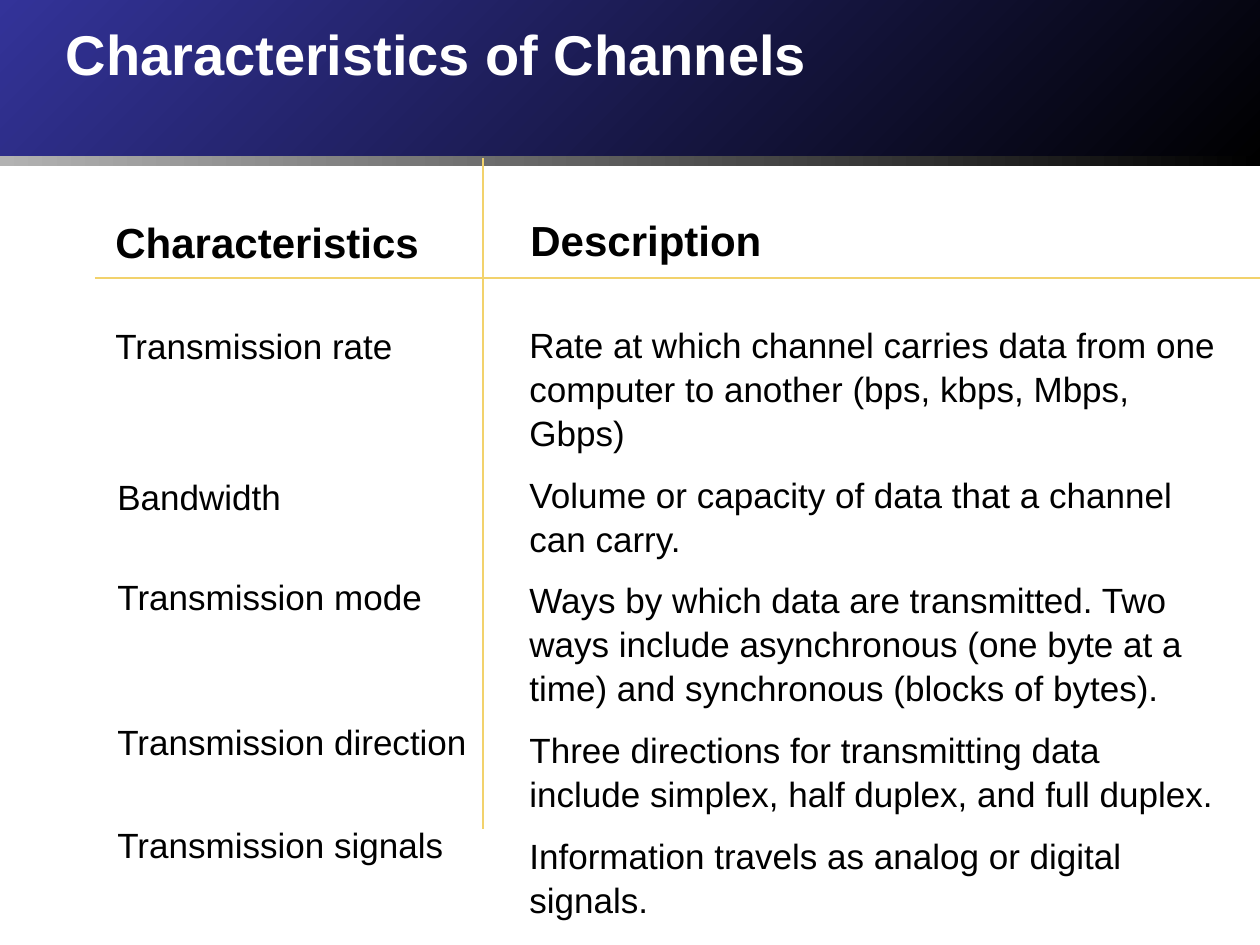
from dataclasses import dataclass

from lxml.etree import SubElement
from pptx import Presentation
from pptx.dml.color import RGBColor as Color
from pptx.enum.shapes import MSO_CONNECTOR as Connector, MSO_SHAPE as Shape
from pptx.enum.text import MSO_ANCHOR as Anchor, MSO_AUTO_SIZE as AutoSize, PP_ALIGN as Align
from pptx.oxml.ns import qn
from pptx.util import Emu, Pt

PX = 914400 // 126
WIDTH, HEIGHT = 1260, 945
TITLE_ONLY = 5


@dataclass(frozen=True)
class Theme:
    font: str = "Arial"
    blue: str = "333399"
    gray: str = "B2B2B2"
    black: str = "000000"
    white: str = "FFFFFF"
    gold: str = "F2D26C"
    title: int = 32
    heading: int = 24
    body: int = 20
    rule: float = 1.5


THEME = Theme()

# Term, left, top, width, height
TERMS = [
    ("Transmission rate", 103, 318, 305, 97),
    ("Bandwidth", 105, 469, 190, 55),
    ("Transmission mode", 105, 569, 333, 55),
    ("Transmission direction", 105, 714, 378, 55),
    ("Transmission signals", 105, 817, 354, 55),
]
DESCRIPTIONS = [
    "Rate at which channel carries data from one computer to another (bps, kbps, Mbps, Gbps)",
    "Volume or capacity of data that a channel can carry.",
    "Ways by which data are transmitted. Two ways include asynchronous "
    "(one byte at a time) and synchronous (blocks of bytes).",
    "Three directions for transmitting data include simplex, half duplex, and full duplex.",
    "Information travels as analog or digital signals.",
]


def px(*lengths):
    return [Emu(length * PX) for length in lengths]


def write(para, text, size=THEME.body, color=THEME.black, bold=False):
    para.alignment = Align.LEFT
    span = para.add_run()
    span.text = text
    span.font.name = THEME.font
    span.font.size = Pt(size)
    span.font.bold = bold
    span.font.color.rgb = Color.from_string(color)
    return span


def add_band(page, top, height, start, angle):
    """Add a full-width bar that fades from the start colour to black."""
    band = page.shapes.add_shape(Shape.RECTANGLE, *px(0, top, WIDTH, height))
    band.shadow.inherit = False
    band.line.fill.background()
    band.fill.gradient()
    band.fill.gradient_angle = angle
    for stop, color, position in zip(band.fill.gradient_stops, (start, THEME.black), (0, 1)):
        stop.color.rgb = Color.from_string(color)
        stop.position = position


def add_text_shadow(span):
    effects = SubElement(span.font._element, qn("a:effectLst"))
    shadow = SubElement(effects, qn("a:outerShdw"), dist="38100", dir="2700000", algn="tl")
    SubElement(shadow, qn("a:srgbClr"), val=THEME.black)
    # The schema wants effects between the fill and the typeface.
    span.font._element.find(qn("a:solidFill")).addnext(effects)


def place_title(page, text):
    title = page.shapes.title
    title.left, title.top, title.width, title.height = px(53, 13, 1144, 126)
    page.shapes._spTree.append(title._element)  # in front of the bands
    title.text_frame.vertical_anchor = Anchor.TOP
    span = write(title.text_frame.paragraphs[0], text, THEME.title, THEME.white, True)
    add_text_shadow(span)


def add_rule(page, *ends):
    rule = page.shapes.add_connector(Connector.STRAIGHT, *px(*ends))
    rule.line.color.rgb = Color.from_string(THEME.gold)
    rule.line.width = Pt(THEME.rule)
    SubElement(rule._element.spPr, qn("a:effectLst"))


def add_text(page, texts, left, top, width, height, wrap=False, before=0, spacing=1, **style):
    box = page.shapes.add_textbox(*px(left, top, width, height))
    frame = box.text_frame
    frame.word_wrap = wrap
    frame.auto_size = AutoSize.SHAPE_TO_FIT_TEXT
    for index, text in enumerate(texts):
        para = frame.add_paragraph() if index else frame.paragraphs[0]
        para.space_before = Pt(before)
        para.line_spacing = spacing
        write(para, text, **style)


def main():
    deck = Presentation()
    deck.slide_width, deck.slide_height = px(WIDTH, HEIGHT)
    page = deck.slides.add_slide(deck.slide_layouts[TITLE_ONLY])

    add_band(page, 0, 166, THEME.blue, 315)
    add_band(page, 156, 10, THEME.gray, 0)
    place_title(page, "Characteristics of Channels")

    add_rule(page, 95, 278, WIDTH, 278)
    add_rule(page, 483, 158, 483, 829)

    heading = {"size": THEME.heading, "bold": True}
    add_text(page, ["Characteristics"], 103, 210, 333, 63, **heading)
    add_text(page, ["Description"], 518, 208, 258, 63, **heading)
    for term, *place in TERMS:
        add_text(page, [term], *place)
    add_text(page, DESCRIPTIONS, 517, 315, 712, 606, wrap=True, before=10, spacing=1.05)

    deck.save("out.pptx")


if __name__ == "__main__":
    main()
